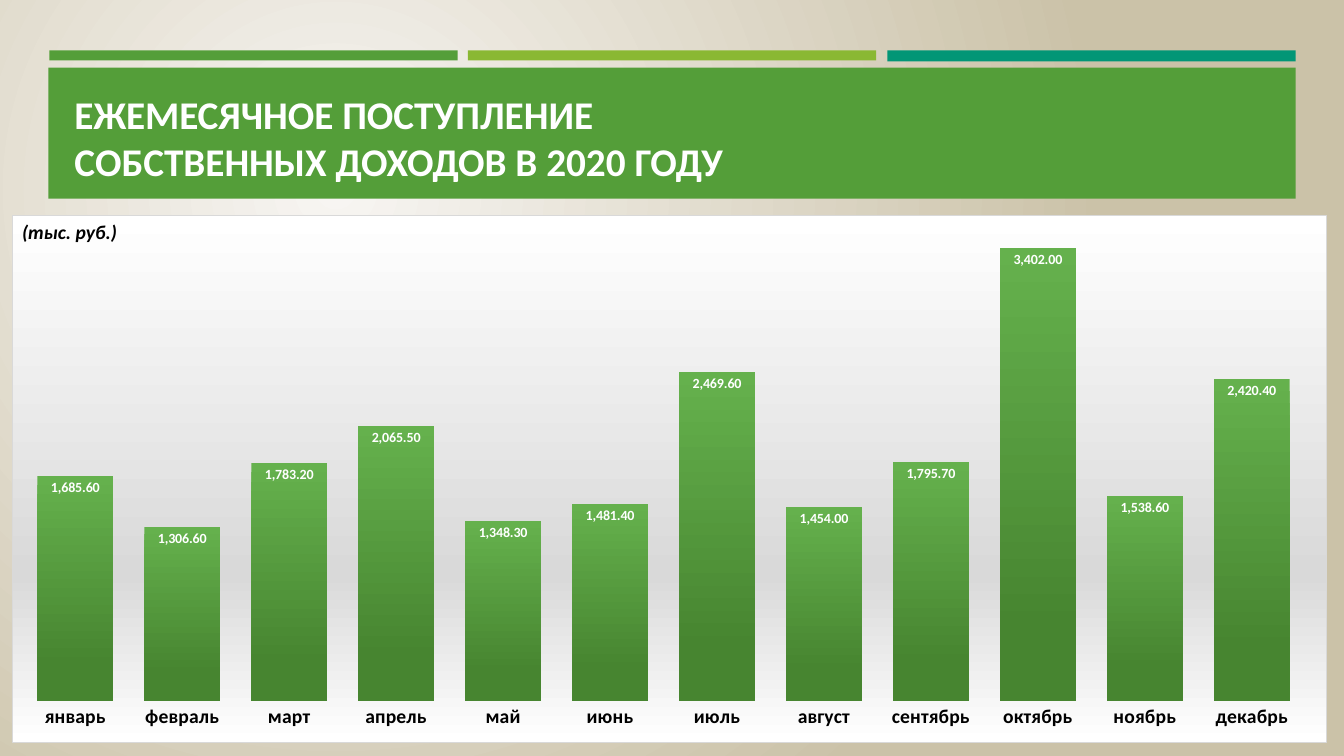
"""Build the slide on monthly own revenue in 2020."""
from lxml import etree
from pptx import Presentation
from pptx.chart.data import CategoryChartData
from pptx.dml.color import RGBColor
from pptx.enum.chart import XL_CHART_TYPE, XL_LABEL_POSITION, XL_TICK_MARK
from pptx.enum.shapes import MSO_SHAPE
from pptx.enum.text import MSO_ANCHOR
from pptx.oxml.ns import nsdecls, qn
from pptx.util import Inches, Pt

COLUMN = XL_CHART_TYPE.COLUMN_CLUSTERED
IN_END = XL_LABEL_POSITION.INSIDE_END
NO_TICK = XL_TICK_MARK.NONE
RECT = MSO_SHAPE.RECTANGLE
TOP, BOTTOM = MSO_ANCHOR.TOP, MSO_ANCHOR.BOTTOM

HUES = {
    "green": "549E39", "lime": "8AB833", "teal": "029676",
    "white": "FFFFFF", "black": "000000", "grey": "D9D9D9",
    "cream": "F7F5F2", "sand": "CBC2A8", "leaf": "65B14D", "moss": "478530",
}
FLOW = '<a:lin ang="5400000" scaled="0"/>'
GLOW = '<a:path path="circle"><a:fillToRect l="50000" t="50000" r="100000" b="100000"/></a:path>'


def blend(stops, shade=FLOW):
    marks = "".join(
        f'<a:gs pos="{pos * 1000}"><a:srgbClr val="{HUES[hue]}"/></a:gs>' for pos, hue in stops)
    return f'<a:gradFill {nsdecls("a")} rotWithShape="1"><a:gsLst>{marks}</a:gsLst>{shade}</a:gradFill>'


def style(font, size, hue, bold=True):
    font.name, font.size, font.bold = "Calibri", Pt(size), bold
    font.color.rgb = RGBColor.from_string(HUES[hue])


deck = Presentation()
deck.slide_width, deck.slide_height = Inches(13.33), Inches(7.5)
slide = deck.slides.add_slide(deck.slide_layouts[6])
slide.background.fill.solid()
back = slide.element.find(".//" + qn("p:bgPr"))
back.replace(back[0], etree.fromstring(blend([(0, "cream"), (100, "sand")], GLOW)))

bars = [
    (0.49, 0.5, 4.05, 0.1, "green"),
    (4.64, 0.5, 4.05, 0.1, "lime"),
    (8.8, 0.5, 4.05, 0.11, "teal"),
    (0.48, 0.67, 12.37, 1.3, "green"),
]
for *box, hue in bars:
    bar = slide.shapes.add_shape(RECT, *map(Inches, box))
    bar.shadow.inherit = False
    bar.fill.solid()
    bar.fill.fore_color.rgb = RGBColor.from_string(HUES[hue])
    bar.line.fill.background()

sums = {
    "январь": 1685.6, "февраль": 1306.6, "март": 1783.2, "апрель": 2065.5,
    "май": 1348.3, "июнь": 1481.4, "июль": 2469.6, "август": 1454,
    "сентябрь": 1795.7, "октябрь": 3402, "ноябрь": 1538.6, "декабрь": 2420.4,
}
data = CategoryChartData(number_format="#,##0.00")
data.categories = list(sums)
data.add_series("Series 1", list(sums.values()))
frame = slide.shapes.add_chart(COLUMN, *map(Inches, (0.12, 2.13, 13.04, 5.24)), data)
chart = frame.chart
style(chart.font, 10, "black", False)
chart.has_legend = chart.has_title = False

months = chart.category_axis
months.major_tick_mark = NO_TICK
months.format.line.fill.background()
style(months.tick_labels.font, 14, "black")
scale = chart.value_axis
scale.minimum_scale, scale.maximum_scale = 0, 3500
scale.has_major_gridlines = False
scale.visible = False

plot = chart.plots[0]
plot.gap_width = 41
plot.vary_by_categories = False
series = plot.series[0]
series.invert_if_negative = False
series.format.fill.solid()
fill = series.format.fill
look = series._element.find(qn("c:spPr"))
look.replace(look[0], etree.fromstring(blend([(0, "leaf"), (84, "moss")])))
labels = series.data_labels
labels.show_value = True
labels.position = IN_END
labels.number_format, labels.number_format_is_linked = "#,##0.00", False
style(labels.font, 10, "white")

panel = blend([(0, "white"), (68, "grey"), (100, "white")])
edge = f'<a:ln w="9525"><a:solidFill><a:srgbClr val="{HUES["grey"]}"/></a:solidFill></a:ln>'
body = chart._chartSpace.find(qn("c:chart"))
body.addnext(etree.fromstring(f'<c:spPr {nsdecls("c", "a")}>{panel}{edge}</c:spPr>'))
area = body.find(qn("c:plotArea"))
for old in area.findall(qn("c:layout")):
    area.remove(old)
place = "".join(
    f'<c:{key} val="{val}"/>' for key, val in (
        ("layoutTarget", "inner"), ("xMode", "edge"), ("yMode", "edge"),
        ("x", 0.007), ("y", 0.037), ("w", 0.977), ("h", 0.885)))
area.insert(0, etree.fromstring(
    f'<c:layout {nsdecls("c")}><c:manualLayout>{place}</c:manualLayout></c:layout>'))

texts = [
    ((0.64, 0.77, 6.84, 1.11), "ЕЖЕМЕСЯЧНОЕ ПОСТУПЛЕНИЕ\vСОБСТВЕННЫХ ДОХОДОВ В 2020 ГОДУ",
     28, "white", BOTTOM, False),
    ((0.12, 2.13, 1.68, 0.34), "(тыс. руб.)", 14, "black", TOP, True),
]
for box, words, size, hue, anchor, slant in texts:
    text = slide.shapes.add_textbox(*map(Inches, box)).text_frame
    text.word_wrap = True
    text.vertical_anchor = anchor
    line = text.paragraphs[0]
    line.text = words
    style(line.font, size, hue)
    line.font.italic = slant

deck.save("out.pptx")
